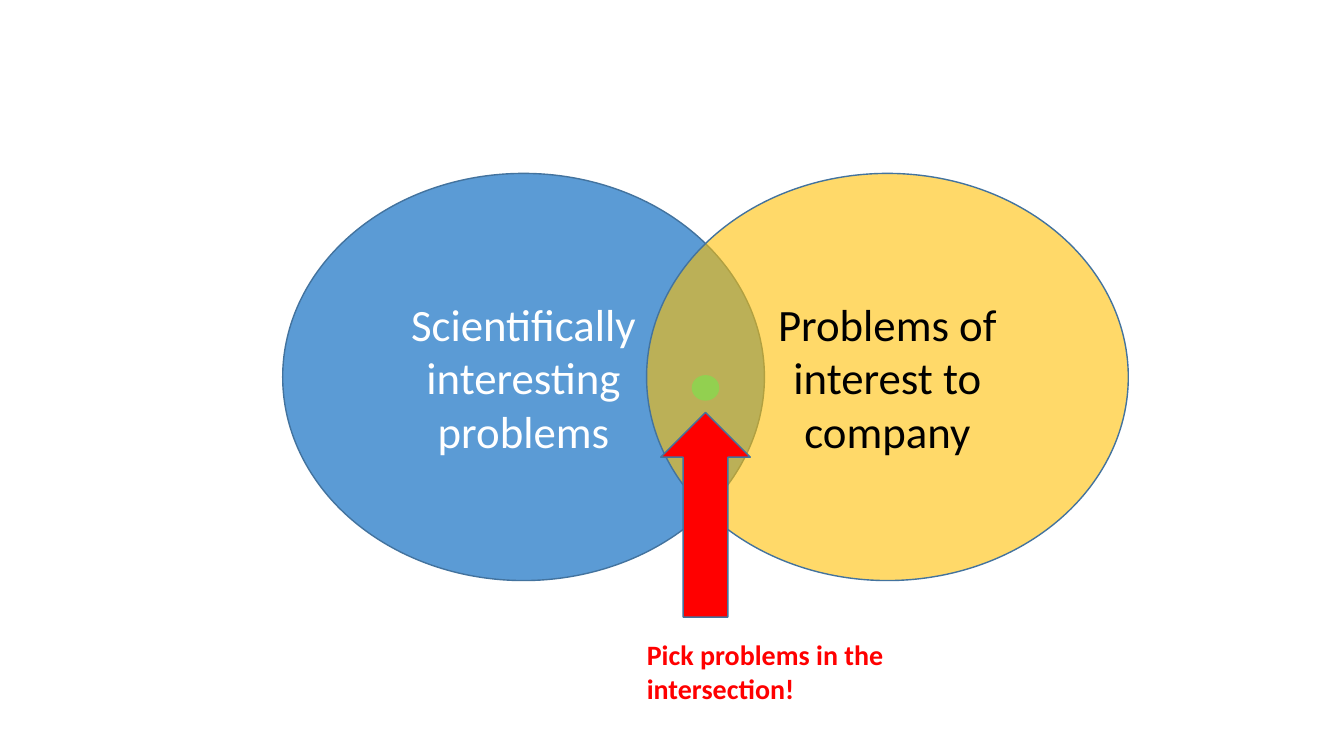
from lxml import etree
from pptx import Presentation
from pptx import util as u
from pptx.dml.color import RGBColor
from pptx.enum import shapes, text
from pptx.oxml.ns import qn

CIRCLES = [
    ("Scientifically interesting problems", "5B9BD5", 100, "FFFFFF"),
    ("Problems of interest to company", "FFC000", 59, "000000"),
]
ADVICE = "Pick problems in the intersection!"
RED, GREEN, OUTLINE = "FF0000", "92D050", "43739E"

SLIDE_W, SLIDE_H = 33.87, 19.05
AXIS = 17.78
CIRCLE_W, CIRCLE_H, CIRCLE_TOP = 12.14, 10.26, 4.37
OVERLAP = 2.97
ARROW_W, ARROW_H, ARROW_TOP = 2.26, 5.16, 10.39
DOT_W, DOT_H, DOT_TOP = 0.66, 0.61, 9.47


def rgb(value):
    return RGBColor.from_string(value)


def write(s, content, size=20, color="000000", bold=False, align="LEFT", anchor="TOP"):
    tf = s.text_frame
    tf.word_wrap = True
    tf.vertical_anchor = text.MSO_ANCHOR[anchor]
    p = tf.paragraphs[0]
    p.alignment = text.PP_ALIGN[align]
    r = p.add_run()
    r.text = content
    r.font.name = "Calibri"
    r.font.size = u.Pt(size)
    r.font.bold = bold
    r.font.color.rgb = rgb(color)


def add(sp, kind, left, top, width, height, fill, line=OUTLINE, opacity=100):
    s = sp.add_shape(shapes.MSO_SHAPE[kind], u.Cm(left), u.Cm(top), u.Cm(width), u.Cm(height))
    s.shadow.inherit = False
    s.fill.solid()
    s.fill.fore_color.rgb = rgb(fill)
    s.line.color.rgb = rgb(line)
    s.line.width = u.Pt(1)
    if opacity < 100:
        color = s.fill._xPr.find(qn("a:solidFill"))[0]
        etree.SubElement(color, qn("a:alpha"), val=str(opacity * 1000))
    return s


def main():
    prs = Presentation()
    prs.slide_width, prs.slide_height = u.Cm(SLIDE_W), u.Cm(SLIDE_H)
    sp = prs.slides.add_slide(prs.slide_layouts[6]).shapes

    step = CIRCLE_W - OVERLAP
    first = AXIS + OVERLAP / 2 - CIRCLE_W
    for i, (label, fill, opacity, color) in enumerate(CIRCLES):
        s = add(sp, "OVAL", first + i * step, CIRCLE_TOP, CIRCLE_W, CIRCLE_H, fill, opacity=opacity)
        write(s, label, size=32, color=color, align="CENTER", anchor="MIDDLE")

    box = sp.add_textbox(u.Cm(16.05), u.Cm(15.95), u.Cm(7.37), u.Cm(1.96))
    write(box, ADVICE, color=RED, bold=True)
    box.text_frame.auto_size = text.MSO_AUTO_SIZE.SHAPE_TO_FIT_TEXT

    add(sp, "UP_ARROW", AXIS - ARROW_W / 2, ARROW_TOP, ARROW_W, ARROW_H, RED)
    add(sp, "FLOWCHART_CONNECTOR", AXIS - DOT_W / 2, DOT_TOP, DOT_W, DOT_H, GREEN, line=GREEN)

    prs.save("out.pptx")


if __name__ == "__main__":
    main()
